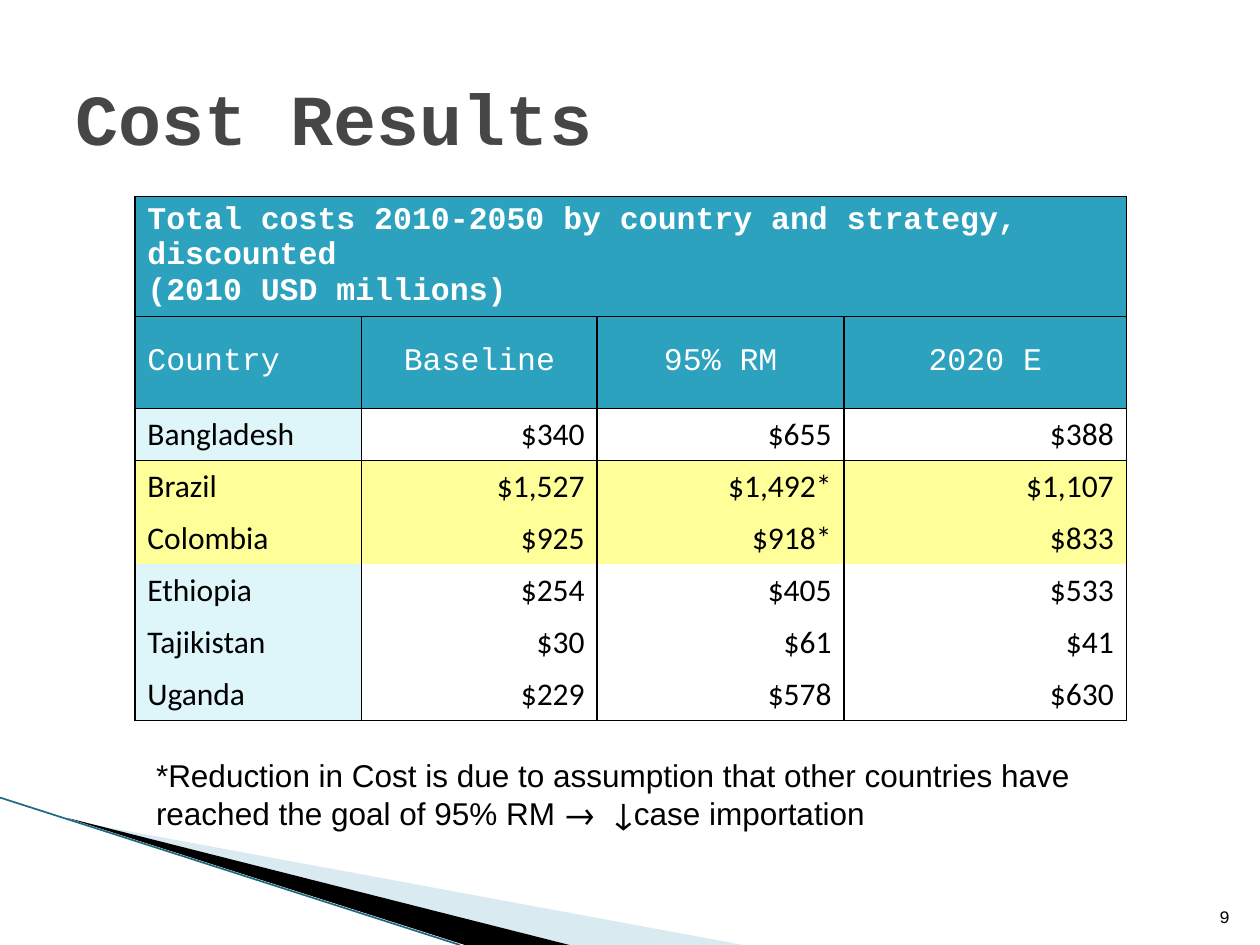
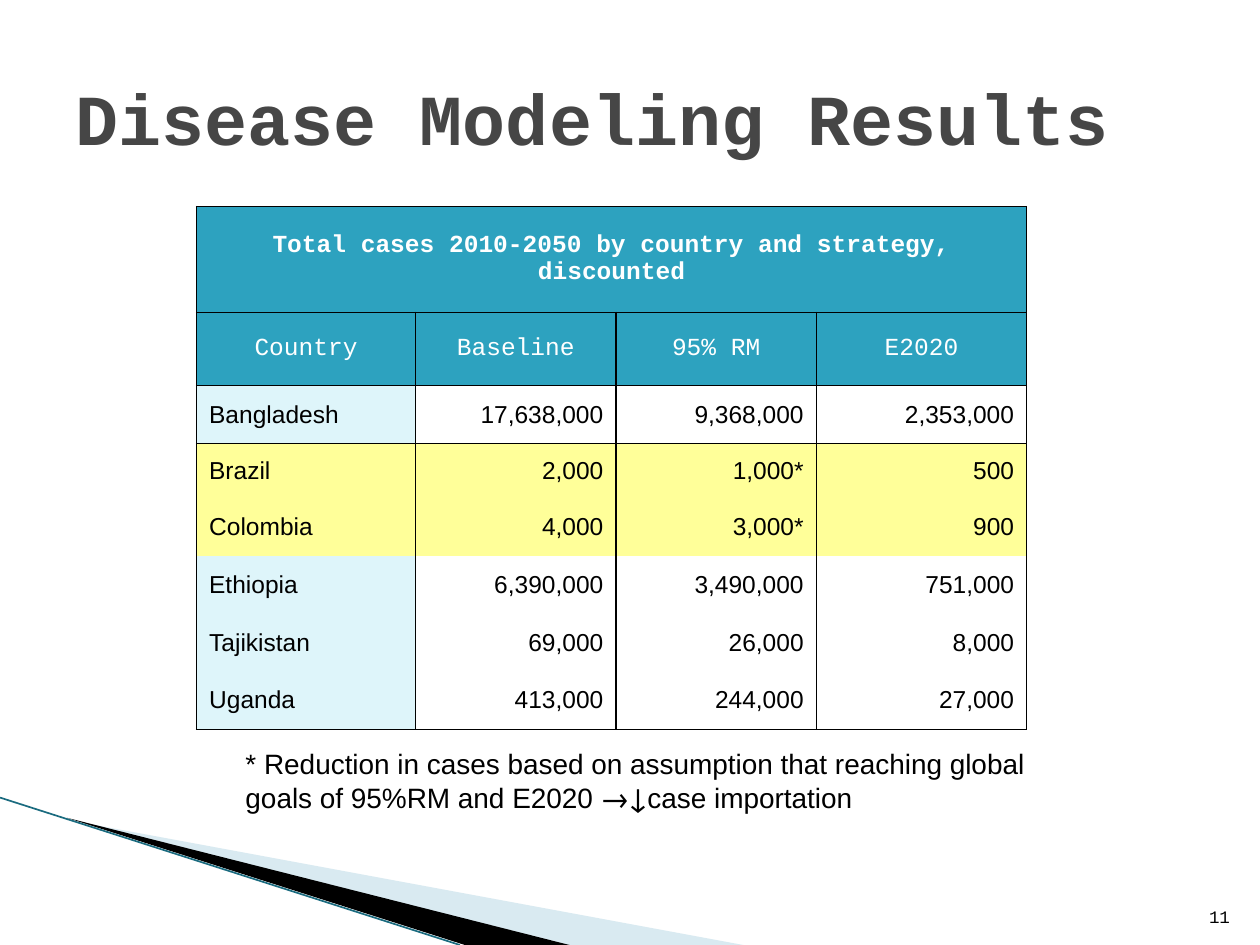
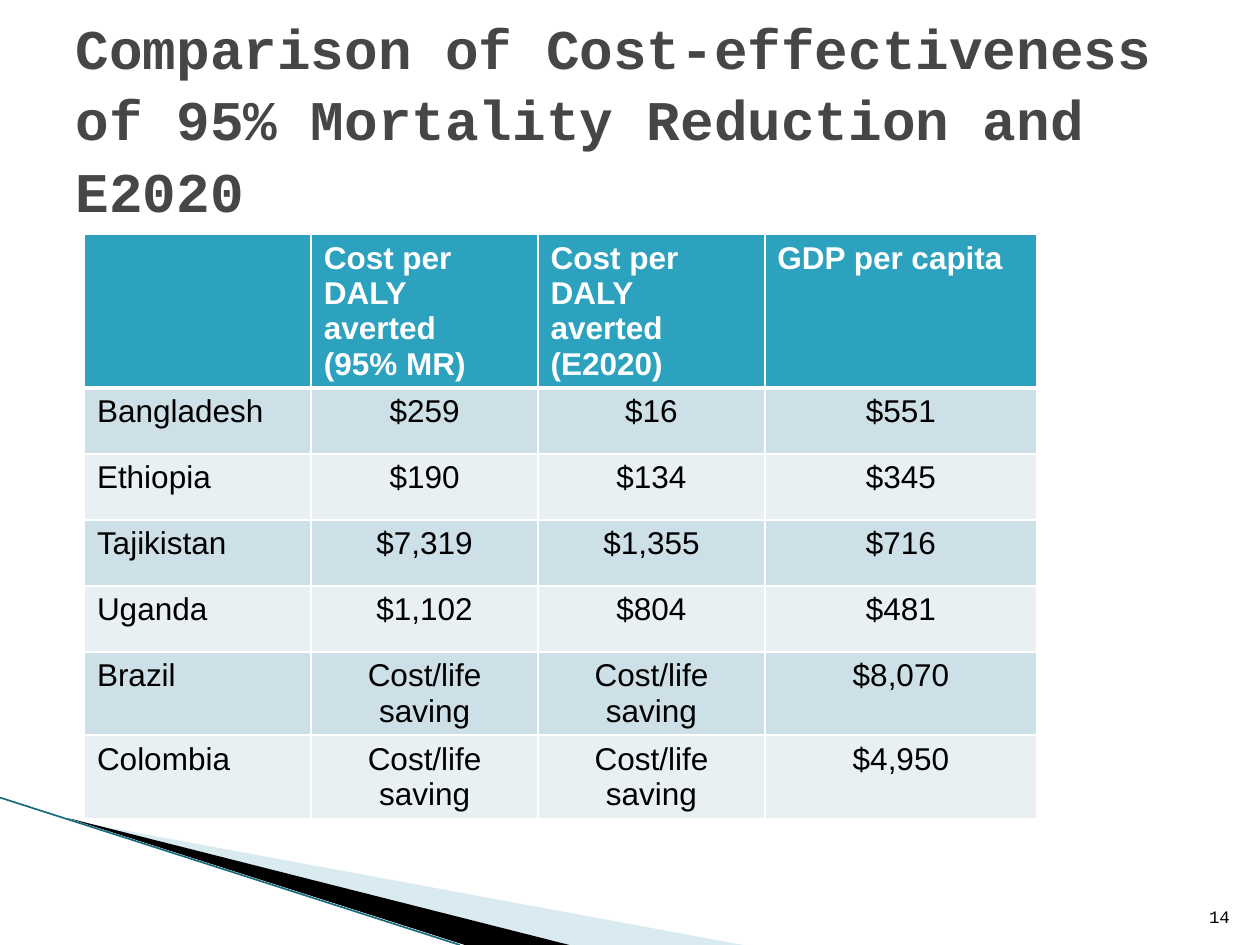
from dataclasses import dataclass, field
from typing import Any, Callable, Optional

import lxml.etree
import pptx
import pptx.dml.color
import pptx.enum.shapes
import pptx.enum.text
import pptx.oxml
import pptx.oxml.ns
import pptx.util

SLIDE_WIDTH = pptx.util.Inches(10)
SLIDE_HEIGHT = pptx.util.Inches(7.5)
GRID_COLUMNS, GRID_ROWS = 100, 75

TEAL, PALE_TEAL, YELLOW = "2DA2BF", "DEF5FA", "FFFF99"
BAND_DARK, BAND_LIGHT = "CDE0E8", "E8F0F4"
WEDGE_BLUE, EDGE_TEAL, TITLE_GREY = "A0CBDC", "1A6B7F", "464646"
BLACK, WHITE = "000000", "FFFFFF"
MONO, SANS, ARROW_FONT = "Courier New", "Arial", "TeX Gyre Schola"
PLAIN_TABLE_STYLE = "{2D5ABB26-0587-4C30-8999-92F81FD0307C}"
HIGHLIGHTED = ("Brazil", "Colombia")

ALIGN = pptx.enum.text.PP_ALIGN
ANCHOR = pptx.enum.text.MSO_ANCHOR


@dataclass(frozen=True)
class Box:
    """A place on the slide, in grid columns and rows."""
    left: float
    top: float
    width: float
    height: float

    def lengths(self) -> tuple[int, int, int, int]:
        return (columns(self.left), rows(self.top),
                columns(self.width), rows(self.height))


@dataclass(frozen=True)
class Wedge:
    points: tuple[tuple[float, float], ...]
    fill: str
    opacity: int = 100


@dataclass(frozen=True)
class CellStyle:
    fill: Optional[str]
    font: dict[str, Any]
    color: str
    alignment: Any
    anchor: Any
    borders: dict[str, tuple[str, float]]


@dataclass(frozen=True)
class TableDesign:
    left: float
    top: float
    column_widths: tuple[float, ...]
    row_heights: tuple[float, ...]
    cells: tuple[tuple[str, ...], ...]
    style: Callable[["TableDesign", int, int], CellStyle]
    size: int = 18
    body_font: str = SANS
    heading_alignment: Any = ALIGN.LEFT


@dataclass(frozen=True)
class Note:
    box: Box
    size: int
    phrases: tuple[tuple[str, str], ...]


@dataclass(frozen=True)
class ResultSlide:
    title: str
    number: int
    table: TableDesign
    note: Optional[Note] = None
    title_size: int = 41
    title_format: dict[str, Any] = field(default_factory=dict)


TITLE_BOX = Box(5, 3, 90, 12.5)
NUMBER_BOX = Box(94.6, 70.1, 4, 4)
WEDGES = (
    Wedge(((5.5, 65.1), (59, 75), (45.2, 75)), WEDGE_BLUE, 40),
    Wedge(((5.3, 64.9), (45.2, 75), (36.9, 75)), BLACK),
)
EDGE = ((0, 63.3), (36.5, 75))


def columns(count: float) -> int:
    return round(SLIDE_WIDTH * count / GRID_COLUMNS)


def rows(count: float) -> int:
    return round(SLIDE_HEIGHT * count / GRID_ROWS)


def rgb(color: str) -> pptx.dml.color.RGBColor:
    return pptx.dml.color.RGBColor.from_string(color)


def apply_format(target: Any, values: dict[str, Any]) -> None:
    for name, value in values.items():
        setattr(target, name, value)


def format_font(font: Any, color: str, values: dict[str, Any]) -> None:
    apply_format(font, values)
    font.color.rgb = rgb(color)


def font_values(name: str, size: int, bold: bool = False) -> dict[str, Any]:
    return {"name": name, "size": pptx.util.Pt(size), "bold": bold}


def results_style(design: TableDesign, row: int, column: int) -> CellStyle:
    """Teal headings, pale country names and highlighted rows in a black frame."""
    is_heading = row < 2
    country = design.cells[row][0]
    sides = ["L", "R"]
    if row <= 2:
        sides.append("T")
    if is_heading or row == len(design.cells) - 1:
        sides.append("B")
    borders = {side: (BLACK, 1) for side in sides}
    if is_heading:
        left_aligned = row == 0 or column == 0
        return CellStyle(
            TEAL, font_values(MONO, design.size, row == 0), WHITE,
            design.heading_alignment if left_aligned else ALIGN.CENTER,
            ANCHOR.MIDDLE, borders)
    fill = PALE_TEAL if column == 0 else None
    if country in HIGHLIGHTED:
        fill = YELLOW
    return CellStyle(
        fill, font_values(design.body_font, design.size), BLACK,
        ALIGN.LEFT if column == 0 else ALIGN.RIGHT, ANCHOR.MIDDLE, borders)


def comparison_style(design: TableDesign, row: int, column: int) -> CellStyle:
    """Teal heading row above banded rows, with white lines."""
    is_heading = row == 0
    borders = {side: (WHITE, 1) for side in "LRTB"}
    if is_heading:
        borders["B"] = (WHITE, 3)
    elif row == 1:
        borders["T"] = (WHITE, 3)
    fill = TEAL if is_heading else BAND_DARK if row % 2 else BAND_LIGHT
    return CellStyle(
        fill, font_values(design.body_font, design.size, is_heading),
        WHITE if is_heading else BLACK,
        ALIGN.LEFT if is_heading or column == 0 else ALIGN.CENTER,
        ANCHOR.TOP, borders)


def draw_border(cell_properties: Any, side: str, color: str, width: float) -> None:
    line = pptx.oxml.parse_xml(
        f'<a:ln{side} {pptx.oxml.ns.nsdecls("a")} w="{pptx.util.Pt(width)}">'
        f'<a:solidFill><a:srgbClr val="{color}"/></a:solidFill></a:ln{side}>')
    cell_properties.append(line)


def format_cell(cell: Any, text: str, style: CellStyle) -> None:
    cell.vertical_anchor = style.anchor
    cell_properties = cell._tc.get_or_add_tcPr()
    for side in "LRTB":
        if side in style.borders:
            draw_border(cell_properties, side, *style.borders[side])
    if style.fill:
        cell.fill.solid()
        cell.fill.fore_color.rgb = rgb(style.fill)
    else:
        cell.fill.background()
    cell.text_frame.text = text
    for paragraph in cell.text_frame.paragraphs:
        paragraph.alignment = style.alignment
        for run in paragraph.runs:
            format_font(run.font, style.color, style.font)


def add_result_table(slide: Any, design: TableDesign) -> None:
    box = Box(design.left, design.top,
              sum(design.column_widths), sum(design.row_heights))
    frame = slide.shapes.add_table(
        len(design.row_heights), len(design.column_widths), *box.lengths())
    frame.element.find(
        ".//" + pptx.oxml.ns.qn("a:tableStyleId")).text = PLAIN_TABLE_STYLE
    table = frame.table
    apply_format(table, {"first_row": False, "horz_banding": False})
    for column, width in zip(table.columns, design.column_widths):
        column.width = columns(width)
    for row, height in zip(table.rows, design.row_heights):
        row.height = rows(height)
    last_column = len(design.column_widths) - 1
    for row_index, texts in enumerate(design.cells):
        if len(texts) == 1:
            table.cell(row_index, 0).merge(table.cell(row_index, last_column))
        for column_index in range(last_column + 1):
            text = texts[column_index] if column_index < len(texts) else ""
            format_cell(table.cell(row_index, column_index), text,
                        design.style(design, row_index, column_index))


def add_text(slide: Any, box: Box, phrases: tuple[tuple[str, str], ...], size: int,
             alignment: Any = ALIGN.LEFT, anchor: Any = ANCHOR.TOP) -> None:
    """Add a one-paragraph text box; each phrase is a text and its font name."""
    frame = slide.shapes.add_textbox(*box.lengths()).text_frame
    apply_format(frame, {"word_wrap": True, "vertical_anchor": anchor})
    paragraph = frame.paragraphs[0]
    paragraph.alignment = alignment
    for text, font_name in phrases:
        run = paragraph.add_run()
        run.text = text
        format_font(run.font, BLACK, font_values(font_name, size))


def add_wedge(slide: Any, wedge: Wedge) -> Any:
    start, *others = [(columns(x), rows(y)) for x, y in wedge.points]
    builder = slide.shapes.build_freeform(*start, scale=1.0)
    builder.add_line_segments(others, close=True)
    shape = builder.convert_to_shape()
    shape.shadow.inherit = False
    shape.line.fill.background()
    shape.fill.solid()
    shape.fill.fore_color.rgb = rgb(wedge.fill)
    if wedge.opacity < 100:
        color = shape.element.find(".//" + pptx.oxml.ns.qn("a:srgbClr"))
        alpha = lxml.etree.SubElement(color, pptx.oxml.ns.qn("a:alpha"))
        alpha.set("val", str(wedge.opacity * 1000))
    return shape


def add_edge(slide: Any) -> Any:
    (start_x, start_y), (end_x, end_y) = EDGE
    edge = slide.shapes.add_connector(
        pptx.enum.shapes.MSO_CONNECTOR.STRAIGHT,
        columns(start_x), rows(start_y), columns(end_x), rows(end_y))
    edge.line.color.rgb = rgb(EDGE_TEAL)
    edge.line.width = pptx.util.Pt(0.95)
    properties = edge.element.find(pptx.oxml.ns.qn("p:spPr"))
    lxml.etree.SubElement(properties, pptx.oxml.ns.qn("a:effectLst"))
    return edge


def decorate_layout(slide: Any) -> None:
    """Draw the corner band on a slide and move it to the shared layout."""
    band = [add_wedge(slide, wedge) for wedge in WEDGES] + [add_edge(slide)]
    for shape in band:
        slide.slide_layout.shapes.element.append(shape.element)


def set_title(slide: Any, content: ResultSlide) -> None:
    title = slide.shapes.title
    apply_format(title, dict(zip(("left", "top", "width", "height"),
                                 TITLE_BOX.lengths())))
    frame = title.text_frame
    frame.text = content.title
    apply_format(frame, {"word_wrap": True, "vertical_anchor": ANCHOR.MIDDLE,
                         "auto_size": pptx.enum.text.MSO_AUTO_SIZE.NONE})
    paragraph = frame.paragraphs[0]
    apply_format(paragraph, {"alignment": ALIGN.LEFT, **content.title_format})
    format_font(paragraph.runs[0].font, TITLE_GREY,
                font_values(MONO, content.title_size, True))


SLIDES = (
    ResultSlide(
        "Cost Results", 9,
        TableDesign(
            10.7, 15.6, (18, 18.7, 19.6, 22.4), (9.5, 7.3) + (4.13,) * 6,
            (
                ("Total costs 2010-2050 by country and strategy, discounted\n"
                 "(2010 USD millions)",),
                ("Country", "Baseline", "95% RM", "2020 E"),
                ("Bangladesh", "$340", "$655", "$388"),
                ("Brazil", "$1,527", "$1,492*", "$1,107"),
                ("Colombia", "$925", "$918*", "$833"),
                ("Ethiopia", "$254", "$405", "$533"),
                ("Tajikistan", "$30", "$61", "$41"),
                ("Uganda", "$229", "$578", "$630"),
            ),
            results_style, body_font="Calibri"),
        Note(Box(11.4, 59.5, 78.7, 7.1), 18, (
            ("*Reduction in Cost is due to assumption that other countries "
             "have reached the goal of 95% RM ", SANS),
            ("→  ↓", ARROW_FONT),
            ("case importation", SANS)))),
    ResultSlide(
        "Disease Modeling Results", 11,
        TableDesign(
            15.6, 16.4, (17.4, 15.9, 15.9, 16.7),
            (8.4, 5.8, 4.6, 4.4, 4.5, 4.6, 4.6, 4.6),
            (
                ("Total cases 2010-2050 by country and strategy, discounted",),
                ("Country", "Baseline", "95% RM", "E2020"),
                ("Bangladesh", "17,638,000", "9,368,000", "2,353,000"),
                ("Brazil", "2,000", "1,000*", "500"),
                ("Colombia", "4,000", "3,000*", "900"),
                ("Ethiopia", "6,390,000", "3,490,000", "751,000"),
                ("Tajikistan", "69,000", "26,000", "8,000"),
                ("Uganda", "413,000", "244,000", "27,000"),
            ),
            results_style, size=14, heading_alignment=ALIGN.CENTER),
        Note(Box(18.5, 58.8, 65.4, 6.4), 16, (
            ("* Reduction in cases based on assumption that reaching global "
             "goals of 95%RM and E2020 ", SANS),
            ("→↓", ARROW_FONT),
            ("case importation", SANS)))),
    ResultSlide(
        "Comparison of Cost-effectiveness of 95% Mortality Reduction and E2020",
        14,
        TableDesign(
            6.7, 18.6, (18, 18, 18, 21.6), (12.2,) + (5.24,) * 4 + (6.6,) * 2,
            (
                ("", "Cost per DALY averted\n(95% MR)",
                 "Cost per DALY averted\n(E2020)", "GDP per capita"),
                ("Bangladesh", "$259", "$16", "$551"),
                ("Ethiopia", "$190", "$134", "$345"),
                ("Tajikistan", "$7,319", "$1,355", "$716"),
                ("Uganda", "$1,102", "$804", "$481"),
                ("Brazil", "Cost/life saving", "Cost/life saving", "$8,070"),
                ("Colombia", "Cost/life saving", "Cost/life saving", "$4,950"),
            ),
            comparison_style),
        title_size=32, title_format={"line_spacing": 1.06}),
)


def main() -> None:
    presentation = pptx.Presentation()
    apply_format(presentation, {"slide_width": SLIDE_WIDTH,
                                "slide_height": SLIDE_HEIGHT})
    title_only = presentation.slide_layouts.get_by_name("Title Only")
    for index, content in enumerate(SLIDES):
        slide = presentation.slides.add_slide(title_only)
        if index == 0:
            decorate_layout(slide)
        set_title(slide, content)
        add_result_table(slide, content.table)
        add_text(slide, NUMBER_BOX, ((str(content.number), MONO),), 10,
                 ALIGN.RIGHT, ANCHOR.BOTTOM)
        if content.note:
            add_text(slide, content.note.box, content.note.phrases,
                     content.note.size)
    presentation.save("out.pptx")


if __name__ == "__main__":
    main()
